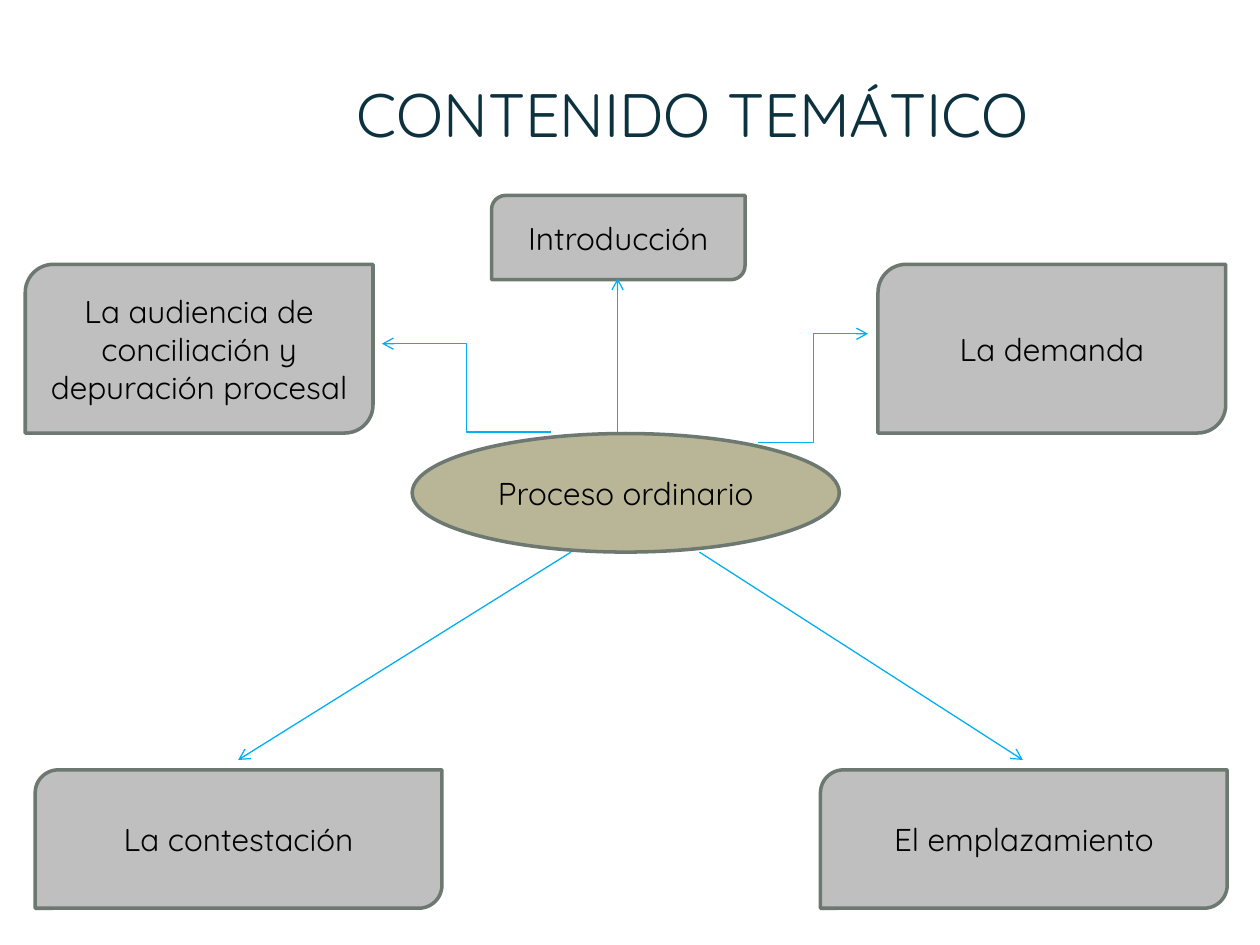
from dataclasses import dataclass

from lxml.etree import SubElement
from pptx import Presentation
from pptx.dml.color import RGBColor
from pptx.enum.shapes import MSO_CONNECTOR, MSO_SHAPE
from pptx.enum.text import MSO_ANCHOR, PP_ALIGN
from pptx.oxml.ns import qn
from pptx.util import Cm, Pt

FONT = "Quicksand"
GREY, SAND, EDGE = "BFBFBF", "B9B697", "6D7871"
BLUE, NAVY, BLACK = "00B0F0", "0C3240", "000000"
DIAG, OVAL = MSO_SHAPE.ROUND_2_DIAG_RECTANGLE, MSO_SHAPE.OVAL
LINE, BENT = MSO_CONNECTOR.STRAIGHT, MSO_CONNECTOR.ELBOW


@dataclass
class Node:
    """A topic, with its place in centimetres."""
    text: str
    left: float
    top: float
    width: float
    height: float
    kind: MSO_SHAPE = DIAG
    fill: str = GREY


@dataclass
class Arrow:
    """An arrow between two points in centimetres."""
    start: tuple[float, float]
    end: tuple[float, float]
    kind: MSO_CONNECTOR = LINE


UPPER = {"top": 5.33, "width": 7.01, "height": 3.4}
LOWER = {"top": 15.52, "width": 8.2, "height": 2.79}

NODES = [
    Node("Proceso ordinario", 8.31, 8.74, 8.61, 2.39, OVAL, SAND),
    Node("Introducción", 9.91, 3.94, 5.11, 1.7),
    Node("La demanda", 17.7, **UPPER),
    Node("El emplazamiento", 16.54, **LOWER),
    Node("La contestación", 0.71, **LOWER),
    Node("La audiencia de conciliación y depuración procesal", 0.51, **UPPER),
]

ARROWS = [
    Arrow((12.45, 8.71), (12.45, 5.61)),
    Arrow((15.29, 8.92), (17.5, 6.73), BENT),
    Arrow((14.1, 11.13), (20.62, 15.32)),
    Arrow((11.51, 11.13), (4.8, 15.32)),
    Arrow((11.1, 8.71), (7.7, 6.93), BENT),
]


def tint(code: str) -> RGBColor:
    return RGBColor.from_string(code)


def write(shape, text: str, *, size: float = 18, color: str = BLACK) -> None:
    frame = shape.text_frame
    frame.word_wrap = True
    frame.vertical_anchor = MSO_ANCHOR.MIDDLE
    para = frame.paragraphs[0]
    para.alignment = PP_ALIGN.CENTER
    run = para.add_run()
    run.text = text
    run.font.name = FONT
    run.font.size = Pt(size)
    run.font.color.rgb = tint(color)


def draw_node(slide, node: Node) -> None:
    box = map(Cm, (node.left, node.top, node.width, node.height))
    shape = slide.shapes.add_shape(node.kind, *box)
    shape.shadow.inherit = False
    shape.fill.solid()
    shape.fill.fore_color.rgb = tint(node.fill)
    shape.line.color.rgb = tint(EDGE)
    shape.line.width = Pt(2)
    write(shape, node.text)


def draw_arrow(slide, arrow: Arrow) -> None:
    ends = map(Cm, arrow.start + arrow.end)
    link = slide.shapes.add_connector(arrow.kind, *ends)
    link.line.color.rgb = tint(BLUE)
    link.line.width = Pt(0.75)
    # Open arrowhead, no shadow
    SubElement(link.line._get_or_add_ln(), qn("a:tailEnd"), type="arrow")
    SubElement(link._element.spPr, qn("a:effectLst"))


def main() -> None:
    deck = Presentation()
    deck.slide_width, deck.slide_height = Cm(25.4), Cm(19.05)
    slide = deck.slides.add_slide(deck.slide_layouts[6])

    # Title
    title = slide.shapes.add_textbox(Cm(2.54), Cm(0.99), Cm(22.86), Cm(2.59))
    write(title, "CONTENIDO TEMÁTICO", size=35, color=NAVY)

    # Topics around the centre, then the arrows to them
    for node in NODES:
        draw_node(slide, node)
    for arrow in ARROWS:
        draw_arrow(slide, arrow)

    deck.save("out.pptx")


if __name__ == "__main__":
    main()
